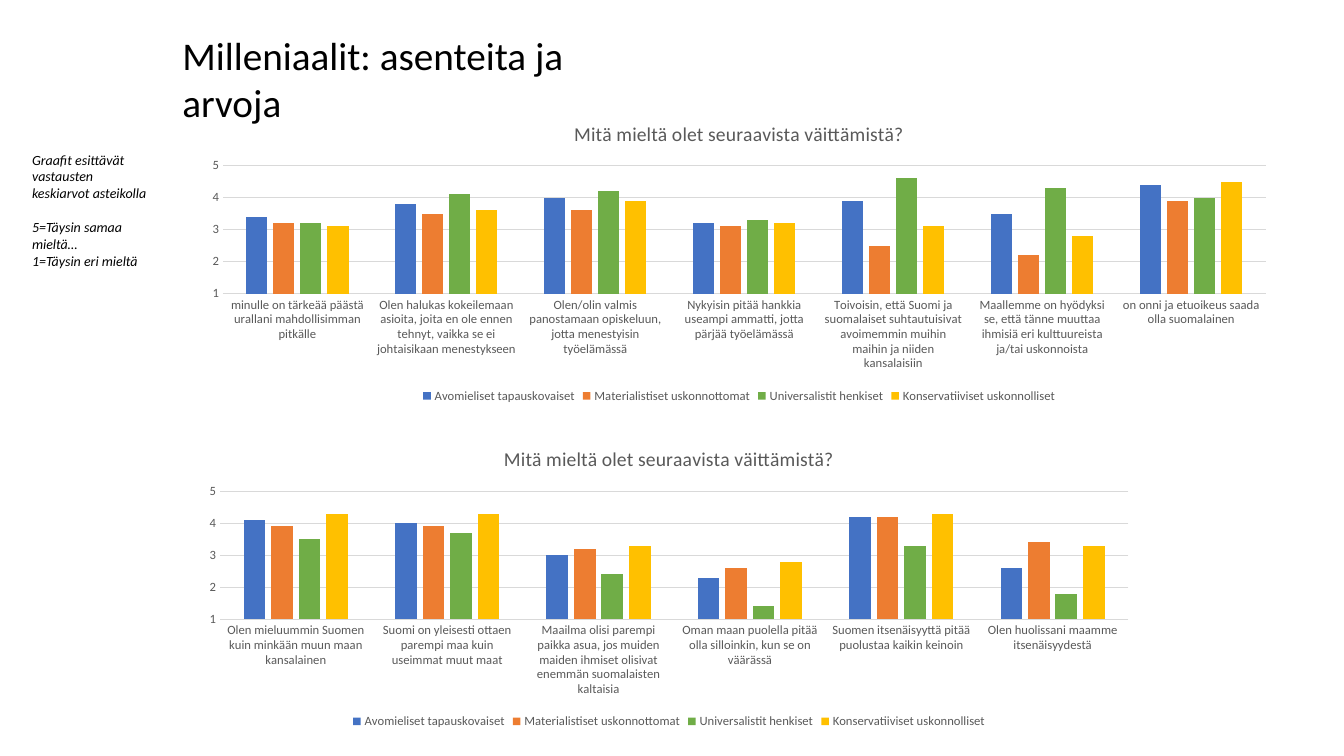
from pptx import Presentation
from pptx.chart.data import CategoryChartData
from pptx.dml.color import RGBColor
from pptx.enum.chart import XL_CHART_TYPE as ChartType, XL_LEGEND_POSITION as LegendSide, XL_TICK_MARK as TickMark
from pptx.enum.text import MSO_ANCHOR as Anchor, MSO_AUTO_SIZE as AutoSize, PP_ALIGN as Align
from pptx.util import Inches, Pt

BLACK = RGBColor(0x00, 0x00, 0x00)
GRAY = RGBColor(0x59, 0x59, 0x59)
GRID = RGBColor(0xD9, 0xD9, 0xD9)
BLUE = RGBColor(0x44, 0x72, 0xC4)
ORANGE = RGBColor(0xED, 0x7D, 0x31)
GREEN = RGBColor(0x70, 0xAD, 0x47)
YELLOW = RGBColor(0xFF, 0xC0, 0x00)
FONT = "Calibri"

GROUPS = [
    ("Avomieliset tapauskovaiset", BLUE),
    ("Materialistiset uskonnottomat", ORANGE),
    ("Universalistit henkiset", GREEN),
    ("Konservatiiviset uskonnolliset", YELLOW),
]

# Each statement with its mean score per group
CAREER_AND_OPENNESS = [
    ("minulle on tärkeää päästä urallani mahdollisimman pitkälle", (3.4, 3.2, 3.2, 3.1)),
    ("Olen halukas kokeilemaan asioita, joita en ole ennen tehnyt, vaikka se ei johtaisikaan menestykseen",
     (3.8, 3.5, 4.1, 3.6)),
    ("Olen/olin valmis panostamaan opiskeluun, jotta menestyisin työelämässä", (4, 3.6, 4.2, 3.9)),
    ("Nykyisin pitää hankkia useampi ammatti, jotta pärjää työelämässä", (3.2, 3.1, 3.3, 3.2)),
    ("Toivoisin, että Suomi ja suomalaiset suhtautuisivat avoimemmin muihin maihin ja niiden kansalaisiin",
     (3.9, 2.5, 4.6, 3.1)),
    ("Maallemme on hyödyksi se, että tänne muuttaa ihmisiä eri kulttuureista ja/tai uskonnoista",
     (3.5, 2.2, 4.3, 2.8)),
    ("on onni ja etuoikeus saada olla suomalainen", (4.4, 3.9, 4, 4.5)),
]
HOMELAND = [
    ("Olen mieluummin Suomen kuin minkään muun maan kansalainen", (4.1, 3.9, 3.5, 4.3)),
    ("Suomi on yleisesti ottaen parempi maa kuin useimmat muut maat", (4, 3.9, 3.7, 4.3)),
    ("Maailma olisi parempi paikka asua, jos muiden maiden ihmiset olisivat enemmän suomalaisten kaltaisia",
     (3, 3.2, 2.4, 3.3)),
    ("Oman maan puolella pitää olla silloinkin, kun se on väärässä", (2.3, 2.6, 1.4, 2.8)),
    ("Suomen itsenäisyyttä pitää puolustaa kaikin keinoin", (4.2, 4.2, 3.3, 4.3)),
    ("Olen huolissani maamme itsenäisyydestä", (2.6, 3.4, 1.8, 3.3)),
]


def write(frame, *texts, size, color=BLACK, italic=False, gap=0):
    """Fill a text frame with one paragraph per text, gap points apart; a newline breaks the line."""
    for index, text in enumerate(texts):
        para = frame.paragraphs[0] if index == 0 else frame.add_paragraph()
        para.alignment = Align.LEFT
        para.line_spacing = 1.0
        para.space_before = Pt(gap if index else 0)
        for number, line_text in enumerate(text.split("\n")):
            if number:
                para.add_line_break()
            span = para.add_run()
            span.text = line_text
            span.font.name, span.font.size = FONT, Pt(size)
            span.font.bold, span.font.italic = False, italic
            span.font.color.rgb = color


deck = Presentation()
deck.slide_width, deck.slide_height = Inches(13.33), Inches(7.5)
page = deck.slides.add_slide(deck.slide_layouts[5])

# Charts
for statements, top, width in ((CAREER_AND_OPENNESS, 1.04, 10.88), (HOMELAND, 4.27, 9.49)):
    data = CategoryChartData(number_format="0.0")
    data.categories = [statement for statement, scores in statements]
    for index, (group, color) in enumerate(GROUPS):
        data.add_series(group, [scores[index] for statement, scores in statements])
    chart = page.shapes.add_chart(ChartType.COLUMN_CLUSTERED, Inches(1.89), Inches(top),
                                  Inches(width), Inches(3), data).chart
    chart.font.name, chart.font.size = FONT, Pt(10)
    chart.font.color.rgb = BLACK

    chart.has_title = True
    write(chart.chart_title.text_frame, "Mitä mieltä olet seuraavista väittämistä?", size=14, color=GRAY)
    chart.chart_title.include_in_layout = False

    chart.has_legend = True
    chart.legend.position = LegendSide.BOTTOM
    chart.legend.include_in_layout = False

    for part in (chart.category_axis, chart.value_axis):
        part.major_tick_mark = part.minor_tick_mark = TickMark.NONE
    for font in (chart.category_axis.tick_labels.font, chart.value_axis.tick_labels.font, chart.legend.font):
        font.name, font.size = FONT, Pt(9)
        font.color.rgb = GRAY

    scale = chart.value_axis
    scale.minimum_scale, scale.maximum_scale, scale.major_unit = 1, 5, 1
    scale.tick_labels.number_format = "0"
    scale.tick_labels.number_format_is_linked = False
    scale.format.line.fill.background()
    for line in (chart.category_axis.format.line, scale.major_gridlines.format.line):
        line.color.rgb = GRID
        line.width = Pt(0.75)

    plot = chart.plots[0]
    plot.gap_width, plot.overlap, plot.vary_by_categories = 219, -27, False
    for series, (group, color) in zip(plot.series, GROUPS):
        series.format.fill.solid()
        series.format.fill.fore_color.rgb = color

# Title
title = page.shapes.title
title.left, title.top, title.width, title.height = Inches(1.71), Inches(0.26), Inches(5.01), Inches(0.57)
title.text_frame.word_wrap = True
title.text_frame.auto_size = AutoSize.NONE
title.text_frame.vertical_anchor = Anchor.TOP
write(title.text_frame, "Milleniaalit: asenteita ja arvoja", size=28)

# Scale note
note = page.shapes.add_textbox(Inches(0.22), Inches(1.45), Inches(1.33), Inches(1.28))
note.text_frame.word_wrap = True
write(note.text_frame, "Graafit esittävät vastausten keskiarvot asteikolla",
      "5=Täysin samaa mieltä…\n1=Täysin eri mieltä", size=10, italic=True, gap=12)

deck.save("out.pptx")
